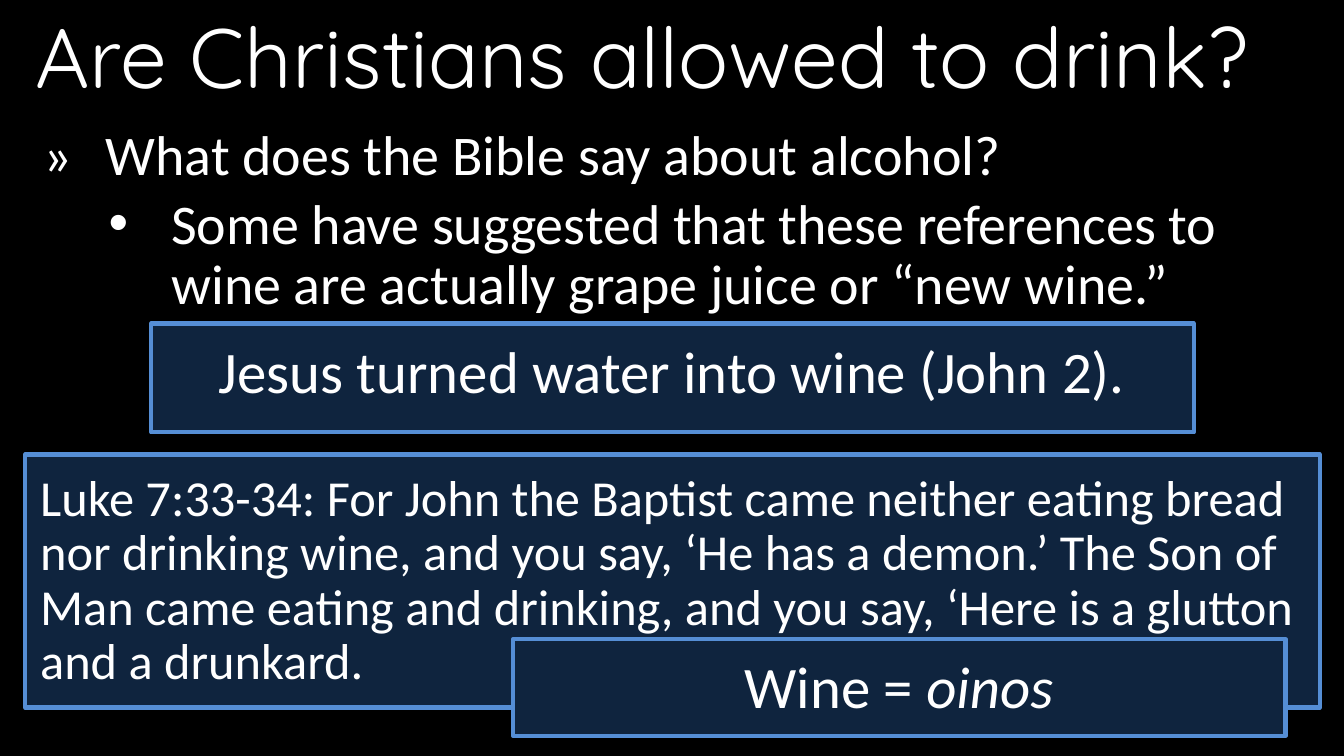
from lxml.etree import SubElement
from pptx import Presentation
from pptx.dml.color import RGBColor as RGB
from pptx.enum.shapes import MSO_SHAPE as SHAPE
from pptx.enum.text import MSO_AUTO_SIZE as FIT, PP_ALIGN as ALIGN
from pptx.oxml.ns import qn
from pptx.util import Inches, Pt

COLORS = {"background": "000000", "text": "FFFFFF", "panel": "0F243E", "border": "558ED5"}
FRAME = {"word_wrap": True, "auto_size": FIT.SHAPE_TO_FIT_TEXT}
TITLE = {"name": "Quicksand", "size": Pt(60)}
POINT = {"name": "Calibri", "size": Pt(40)}
VERSE = {"name": "Calibri", "size": Pt(36)}
CLAIM = {"name": "Calibri", "size": Pt(42)}
BODY = {"line_spacing": 0.9, "space_after": Pt(6)}
QUOTE = {"line_spacing": 0.9, "space_after": Pt(3)}
CENTERED = {**QUOTE, "alignment": ALIGN.CENTER}


def apply(target, values):
    for key, value in values.items():
        setattr(target, key, value)


class Deck:
    """Holds the colours and the current slide, and adds styled elements to it."""

    def __init__(self, prs, colors):
        self.colors = {name: RGB.from_string(value) for name, value in colors.items()}
        self.s = prs.slides.add_slide(prs.slide_layouts[6])
        fill = self.s.background.fill
        fill.solid()
        fill.fore_color.rgb = self.colors["background"]

    def text_box(self, box):
        tf = self.s.shapes.add_textbox(*map(Inches, box)).text_frame
        apply(tf, FRAME)
        return tf

    def add_text(self, p, runs, font, layout):
        apply(p, layout)
        for text, extra in runs:
            r = p.add_run()
            r.text = text
            apply(r.font, {**font, **extra})
            r.font.color.rgb = self.colors["text"]

    def indent(self, p, left, hanging, bullet=None):
        pPr = p._p.get_or_add_pPr()
        pPr.set("marL", str(Inches(left)))
        pPr.set("indent", str(-Inches(hanging)))
        if bullet:
            SubElement(pPr, qn("a:buFont")).set("typeface", "Arial")
            SubElement(pPr, qn("a:buChar")).set("char", bullet)

    def panel(self, box):
        sp = self.s.shapes.add_shape(SHAPE.RECTANGLE, *map(Inches, box))
        sp.shadow.inherit = False
        sp.fill.solid()
        sp.fill.fore_color.rgb = self.colors["panel"]
        sp.line.color.rgb = self.colors["border"]
        sp.line.width = Pt(3)

    def callout(self, panel, box, runs, font, layout):
        self.panel(panel)
        self.add_text(self.text_box(box).paragraphs[0], runs, font, layout)


def main():
    prs = Presentation()
    prs.slide_width, prs.slide_height = Inches(13.33), Inches(7.5)
    deck = Deck(prs, COLORS)

    tf = deck.text_box((0.33, 1.21, 12.42, 2))
    question, suggestion = tf.paragraphs[0], tf.add_paragraph()
    deck.add_text(question, [("»\tWhat does the Bible say about alcohol?", {})], POINT, BODY)
    deck.indent(question, 0.62, 0.62)
    deck.add_text(suggestion, [("Some have suggested that these references to wine are "
                                "actually grape juice or “new wine.”", {})], POINT, BODY)
    deck.indent(suggestion, 1.27, 0.62, "•")

    title = deck.text_box((0.25, 0, 13.08, 1.11)).paragraphs[0]
    deck.add_text(title, [("Are Christians allowed to drink?", {})], TITLE, {})

    callouts = [
        ((1.5, 3.21, 10.34, 1.08), (1.53, 3.35, 10.27, 0.74),
         [("Jesus turned water into wine (John 2).", {})], CLAIM, CENTERED),
        ((0.25, 4.51, 12.84, 2.51), (0.3, 4.64, 12.76, 2.28),
         [("Luke 7:33-34: For John the Baptist came neither eating bread nor drinking wine, "
           "and you say, ‘He has a demon.’ The Son of Man came eating and drinking, "
           "and you say, ‘Here is a glutton and a drunkard.", {})], VERSE, QUOTE),
        ((5.09, 6.34, 7.66, 0.96), (5.11, 6.48, 7.61, 0.74),
         [("Wine = ", {}), ("oinos", {"italic": True})], CLAIM, CENTERED),
    ]
    for callout in callouts:
        deck.callout(*callout)

    prs.save("out.pptx")


if __name__ == "__main__":
    main()
